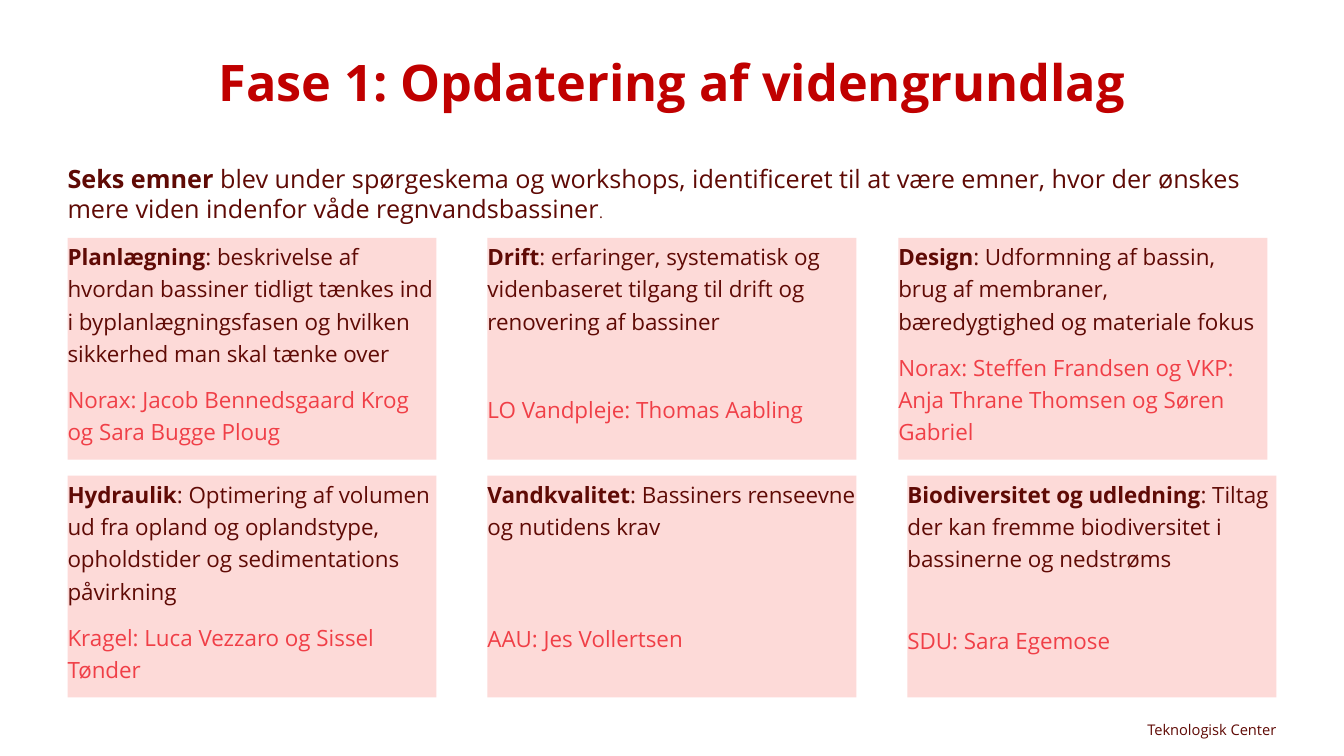
from pptx import Presentation
from pptx.dml.color import RGBColor
from pptx.enum.shapes import MSO_SHAPE
from pptx.enum.text import MSO_ANCHOR, PP_ALIGN
from pptx.util import Inches, Pt

FONT = "Open Sans"
TITLE_RED = RGBColor(0xC0, 0x00, 0x00)
DARK_RED = RGBColor(0x5F, 0x0A, 0x05)
NAME_RED = RGBColor(0xF0, 0x3F, 0x47)
PALE_RED = RGBColor(0xFD, 0xDA, 0xD8)

LEFT, WIDTH = 0.67, 11.99
CARD_W, CARD_H = 3.66, 2.2
COL_STEP, ROW_STEP, GRID_TOP = 4.165, 2.36, 2.36
DESIGN_SHIFT = -0.09

TOPICS = [
    [
        ("Planlægning",
         ": beskrivelse af hvordan bassiner tidligt tænkes ind i "
         "byplanlægningsfasen og hvilken sikkerhed man skal tænke over",
         "Norax: Jacob Bennedsgaard Krog og Sara Bugge Ploug", 10, 0),
        ("Drift",
         ": erfaringer, systematisk og videnbaseret tilgang til drift og "
         "renovering af bassiner",
         "LO Vandpleje: Thomas Aabling", 40, 0),
        ("Design",
         ": Udformning af bassin, brug af membraner, bæredygtighed og "
         "materiale fokus",
         "Norax: Steffen Frandsen og VKP: Anja Thrane Thomsen og Søren Gabriel",
         10, DESIGN_SHIFT),
    ],
    [
        ("Hydraulik",
         ": Optimering af volumen ud fra opland og oplandstype, opholdstider "
         "og sedimentations påvirkning",
         "Kragel: Luca Vezzaro og Sissel Tønder", 10, 0),
        ("Vandkvalitet", ": Bassiners renseevne og nutidens krav",
         "AAU: Jes Vollertsen", 57, 0),
        ("Biodiversitet og udledning",
         ": Tiltag der kan fremme biodiversitet i bassinerne og nedstrøms",
         "SDU: Sara Egemose", 35, 0),
    ],
]


def set_attrs(obj, values):
    for name, value in values.items():
        setattr(obj, name, value)


def add_run(p, text, size, color, bold=False):
    r = p.add_run()
    r.text = text
    set_attrs(r.font, {"name": FONT, "size": Pt(size), "bold": bold})
    r.font.color.rgb = color


def set_frame(sp, anchor, top=0, right=0):
    tf = sp.text_frame
    set_attrs(tf, {
        "word_wrap": True, "vertical_anchor": anchor,
        "margin_left": 0, "margin_right": Inches(right),
        "margin_top": Inches(top), "margin_bottom": 0,
    })
    return tf


def add_text(s, box, runs, align, anchor, top=0, right=0, spacing=1.0):
    sp = s.shapes.add_textbox(*map(Inches, box))
    p = set_frame(sp, anchor, top, right).paragraphs[0]
    set_attrs(p, {"alignment": align, "line_spacing": spacing})
    for run in runs:
        add_run(p, *run)


def add_title(s, box):
    add_text(s, box,
             [("Fase 1: Opdatering af videngrundlag", 36, TITLE_RED, True)],
             PP_ALIGN.CENTER, MSO_ANCHOR.MIDDLE, spacing=0.9)


def add_intro(s, box):
    add_text(s, box, [
        ("Seks emner ", 18, DARK_RED, True),
        ("blev under spørgeskema og workshops, identificeret til at være "
         "emner, hvor der ønskes mere viden indenfor våde regnvandsbassiner",
         18, DARK_RED),
        (".", 10.5, DARK_RED),
    ], PP_ALIGN.LEFT, MSO_ANCHOR.BOTTOM, top=0.05, right=0.1)


def add_footer(s, box):
    add_text(s, box, [("Teknologisk Center", 10.5, DARK_RED)],
             PP_ALIGN.RIGHT, MSO_ANCHOR.BOTTOM, top=0.05)


def add_card(s, box, topic, description, people, gap):
    sp = s.shapes.add_shape(MSO_SHAPE.RECTANGLE, *map(Inches, box))
    sp.shadow.inherit = False
    sp.fill.solid()
    sp.fill.fore_color.rgb = PALE_RED
    sp.line.fill.background()
    tf = set_frame(sp, MSO_ANCHOR.TOP)
    p = tf.paragraphs[0]
    add_run(p, topic, 16, DARK_RED, True)
    add_run(p, description, 16, DARK_RED)
    p = tf.add_paragraph()
    p.space_before = Pt(gap)
    add_run(p, people, 16, NAME_RED)
    for p in tf.paragraphs:
        set_attrs(p, {"alignment": PP_ALIGN.LEFT, "line_spacing": 1.2})


def add_topic_grid(s, left, top):
    for row, cards in enumerate(TOPICS):
        for col, (topic, description, people, gap, shift) in enumerate(cards):
            box = (left + col * COL_STEP + shift, top + row * ROW_STEP,
                   CARD_W, CARD_H)
            add_card(s, box, topic, description, people, gap)


def main():
    prs = Presentation()
    set_attrs(prs, {"slide_width": Inches(13.33), "slide_height": Inches(7.5)})
    s = prs.slides.add_slide(prs.slide_layouts[6])
    add_title(s, (LEFT, 0.33, WIDTH, 1.03))
    add_intro(s, (LEFT, 1.5, WIDTH, 0.72))
    add_topic_grid(s, LEFT, GRID_TOP)
    add_footer(s, (11.15, 7.09, 1.51, 0.24))
    prs.save("out.pptx")


if __name__ == "__main__":
    main()
